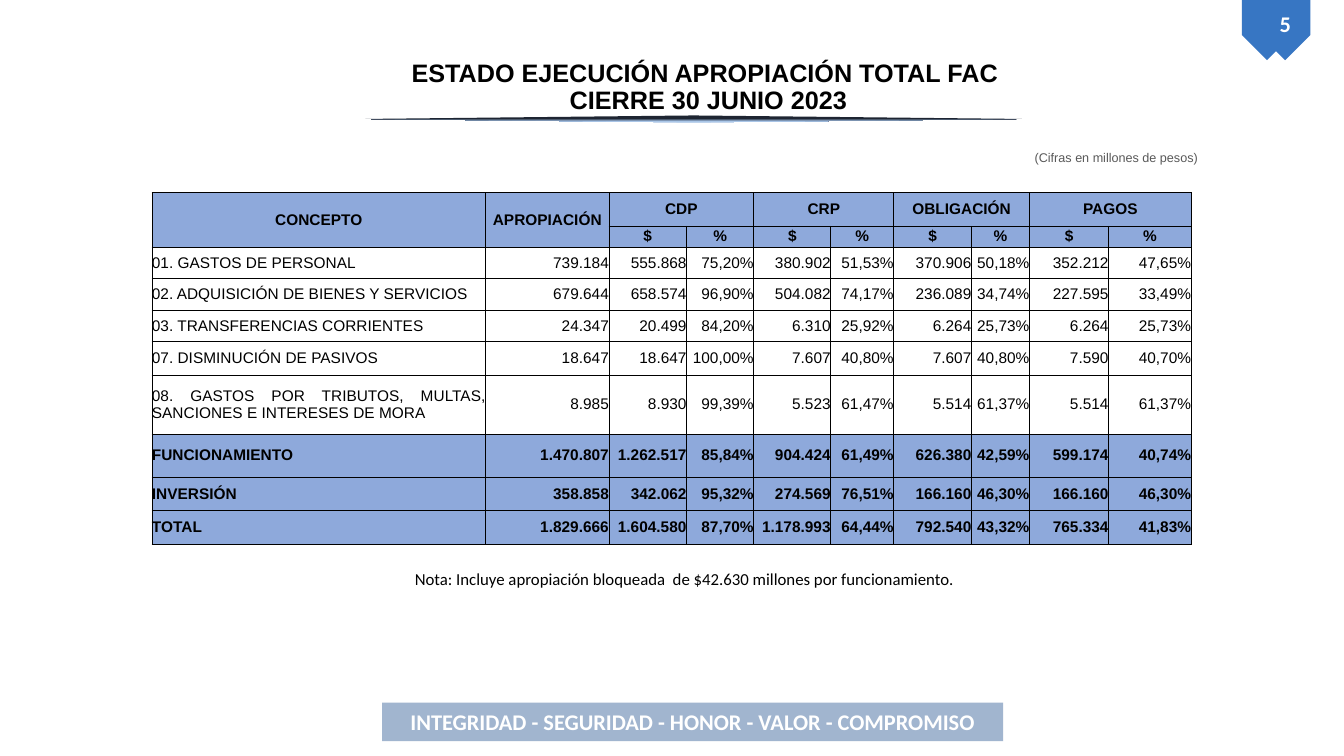
from lxml import etree
from pptx import Presentation
from pptx.dml.color import RGBColor
from pptx.enum.shapes import MSO_SHAPE
from pptx.enum.text import MSO_ANCHOR, PP_ALIGN
from pptx.oxml import parse_xml
from pptx.oxml.ns import nsdecls, qn
from pptx.util import Pt

RECT = MSO_SHAPE.RECTANGLE
PENTAGON = MSO_SHAPE.PENTAGON
DIAMOND = MSO_SHAPE.FLOWCHART_DECISION
TOP, MIDDLE = MSO_ANCHOR.TOP, MSO_ANCHOR.MIDDLE
LEFT, CENTER = PP_ALIGN.LEFT, PP_ALIGN.CENTER
RIGHT, JUSTIFY = PP_ALIGN.RIGHT, PP_ALIGN.JUSTIFY

BLACK = RGBColor(0x00, 0x00, 0x00)
WHITE = RGBColor(0xFF, 0xFF, 0xFF)
GRAY = RGBColor(0x59, 0x59, 0x59)
BADGE_BLUE = RGBColor(0x37, 0x76, 0xC3)
BAR_BLUE = RGBColor(0x29, 0x58, 0x92)
BAND_BLUE = RGBColor(0x8E, 0xA9, 0xDB)
RULE_STOPS = [
    (45, RGBColor(0x1E, 0x25, 0x32)),
    (83, RGBColor(0xA4, 0xC1, 0xE5)),
    (100, RGBColor(0xC2, 0xD6, 0xEE)),
]

COL_WIDTHS = [238.5, 88, 55.5, 48, 55, 45, 55.5, 41.5, 56.5, 59]
ROW_HEIGHTS = [24, 15, 22.5, 22.5, 22.5, 24, 42, 31, 24, 24]
HEADER_ROWS = 2
FIRST_TOTAL_ROW = 7
GROUPS = ["CDP", "CRP", "OBLIGACIÓN", "PAGOS"]
BUDGET = [
    ["01. GASTOS DE PERSONAL", "739.184", "555.868", "75,20%", "380.902",
     "51,53%", "370.906", "50,18%", "352.212", "47,65%"],
    ["02. ADQUISICIÓN DE BIENES Y SERVICIOS", "679.644", "658.574", "96,90%", "504.082",
     "74,17%", "236.089", "34,74%", "227.595", "33,49%"],
    ["03. TRANSFERENCIAS CORRIENTES", "24.347", "20.499", "84,20%", "6.310",
     "25,92%", "6.264", "25,73%", "6.264", "25,73%"],
    ["07. DISMINUCIÓN DE PASIVOS", "18.647", "18.647", "100,00%", "7.607",
     "40,80%", "7.607", "40,80%", "7.590", "40,70%"],
    ["08. GASTOS POR TRIBUTOS, MULTAS, SANCIONES E INTERESES DE MORA", "8.985", "8.930",
     "99,39%", "5.523", "61,47%", "5.514", "61,37%", "5.514", "61,37%"],
    ["FUNCIONAMIENTO", "1.470.807", "1.262.517", "85,84%", "904.424",
     "61,49%", "626.380", "42,59%", "599.174", "40,74%"],
    ["INVERSIÓN", "358.858", "342.062", "95,32%", "274.569",
     "76,51%", "166.160", "46,30%", "166.160", "46,30%"],
    ["TOTAL", "1.829.666", "1.604.580", "87,70%", "1.178.993",
     "64,44%", "792.540", "43,32%", "765.334", "41,83%"],
]


def write(tf, text, size, font, color, bold=False, align=CENTER):
    tf.text = text
    for p in tf.paragraphs:
        p.alignment = align
        for r in p.runs:
            r.font.size, r.font.name, r.font.bold = Pt(size), font, bold
            r.font.color.rgb = color


def add_text(slide, x, y, w, h, text, size, font, color, bold=False, align=CENTER):
    tf = slide.shapes.add_textbox(Pt(x), Pt(y), Pt(w), Pt(h)).text_frame
    tf.word_wrap = True
    write(tf, text, size, font, color, bold, align)


def add_shape(slide, kind, x, y, w, h, color):
    s = slide.shapes.add_shape(kind, Pt(x), Pt(y), Pt(w), Pt(h))
    s.shadow.inherit = False
    s.fill.solid()
    s.fill.fore_color.rgb = color
    s.line.fill.background()
    return s


def add_badge(slide, x, y, w, h, number):
    plate_w = 36
    for left in (x, x + w - plate_w):
        plate = add_shape(slide, PENTAGON, left + (plate_w - h) / 2,
                          y + (h - plate_w) / 2, h, plate_w, BADGE_BLUE)
        plate.rotation = 90
    add_text(slide, x + w - 40, y + 4, 44, 27, number, 16, "Calibri", WHITE, True)


def add_slogan(slide, x, y, w, h, text):
    bar = add_shape(slide, RECT, x, y, w, h, BAR_BLUE)
    clr = bar.fill._xPr.find(qn("a:solidFill"))[0]
    etree.SubElement(clr, qn("a:alpha")).set("val", "44000")
    bar.text_frame.vertical_anchor = MIDDLE
    write(bar.text_frame, text, 16, "Calibri", WHITE, True)


def add_title(slide, x, y, w, h, text):
    rule = add_shape(slide, DIAMOND, x + 37, y + 43, 469, 5, BLACK)
    stops = "".join(
        f'<a:gs pos="{pos * 1000}"><a:srgbClr val="{color}"/></a:gs>'
        for pos, color in RULE_STOPS)
    gradient = parse_xml(
        f'<a:gradFill {nsdecls("a")}><a:gsLst>{stops}</a:gsLst>'
        '<a:lin ang="5400000" scaled="0"/></a:gradFill>')
    spPr = rule._element.spPr
    spPr.replace(spPr.find(qn("a:solidFill")), gradient)

    title = slide.shapes.title
    title.left, title.top, title.width, title.height = Pt(x), Pt(y), Pt(w), Pt(h)
    tf = title.text_frame
    tf.vertical_anchor = TOP
    write(tf, text, 18, "Arial", BLACK, True)
    for p in tf.paragraphs:
        p.line_spacing = 0.9


def add_borders(cell):
    tcPr = cell._tc.get_or_add_tcPr()
    for side in ("lnL", "lnR", "lnT", "lnB"):
        tcPr.append(parse_xml(
            f'<a:{side} {nsdecls("a")} w="{Pt(0.5)}"><a:solidFill>'
            f'<a:srgbClr val="{BLACK}"/></a:solidFill></a:{side}>'))


def add_budget_table(slide, x, y):
    header = ["CONCEPTO", "APROPIACIÓN"]
    subheader = ["", ""]
    for group in GROUPS:
        header += [group, ""]
        subheader += ["$", "%"]
    rows = [header, subheader] + BUDGET

    table = slide.shapes.add_table(
        len(rows), len(COL_WIDTHS), Pt(x), Pt(y),
        Pt(sum(COL_WIDTHS)), Pt(sum(ROW_HEIGHTS))).table
    for col, width in zip(table.columns, COL_WIDTHS):
        col.width = Pt(width)
    for row, height in zip(table.rows, ROW_HEIGHTS):
        row.height = Pt(height)

    for i, values in enumerate(rows):
        is_header = i < HEADER_ROWS
        banded = is_header or i >= FIRST_TOTAL_ROW
        for j, value in enumerate(values):
            cell = table.cell(i, j)
            cell.margin_left = cell.margin_right = 0
            cell.margin_top = cell.margin_bottom = 0
            cell.vertical_anchor = MIDDLE
            add_borders(cell)
            if banded:
                cell.fill.solid()
                cell.fill.fore_color.rgb = BAND_BLUE
            else:
                cell.fill.background()
            align = CENTER if is_header else RIGHT if j else JUSTIFY
            write(cell.text_frame, value, 11, "Arial", BLACK, banded, align)

    for j in (0, 1):
        table.cell(0, j).merge(table.cell(1, j))
    for j in range(2, len(COL_WIDTHS), 2):
        table.cell(0, j).merge(table.cell(0, j + 1))


def main():
    prs = Presentation()
    prs.slide_width, prs.slide_height = Pt(960), Pt(540)
    slide = prs.slides.add_slide(prs.slide_layouts[5])
    add_badge(slide, 887, 0, 49, 43, "5")
    add_slogan(slide, 273, 502, 443.5, 27.5,
               "INTEGRIDAD - SEGURIDAD - HONOR - VALOR - COMPROMISO")
    add_title(slide, 224, 39.5, 564, 73,
              "ESTADO EJECUCIÓN APROPIACIÓN TOTAL FAC \nCIERRE 30 JUNIO 2023")
    add_text(slide, 732, 103.5, 136, 18, "(Cifras en millones de pesos)",
             9, "Arial", GRAY, align=LEFT)
    add_text(slide, 86.5, 402.5, 805, 22,
             "Nota: Incluye apropiación bloqueada  de $42.630 millones por funcionamiento.",
             12, "Calibri", BLACK)
    add_budget_table(slide, 108.5, 137.5)
    prs.save("out.pptx")


if __name__ == "__main__":
    main()
